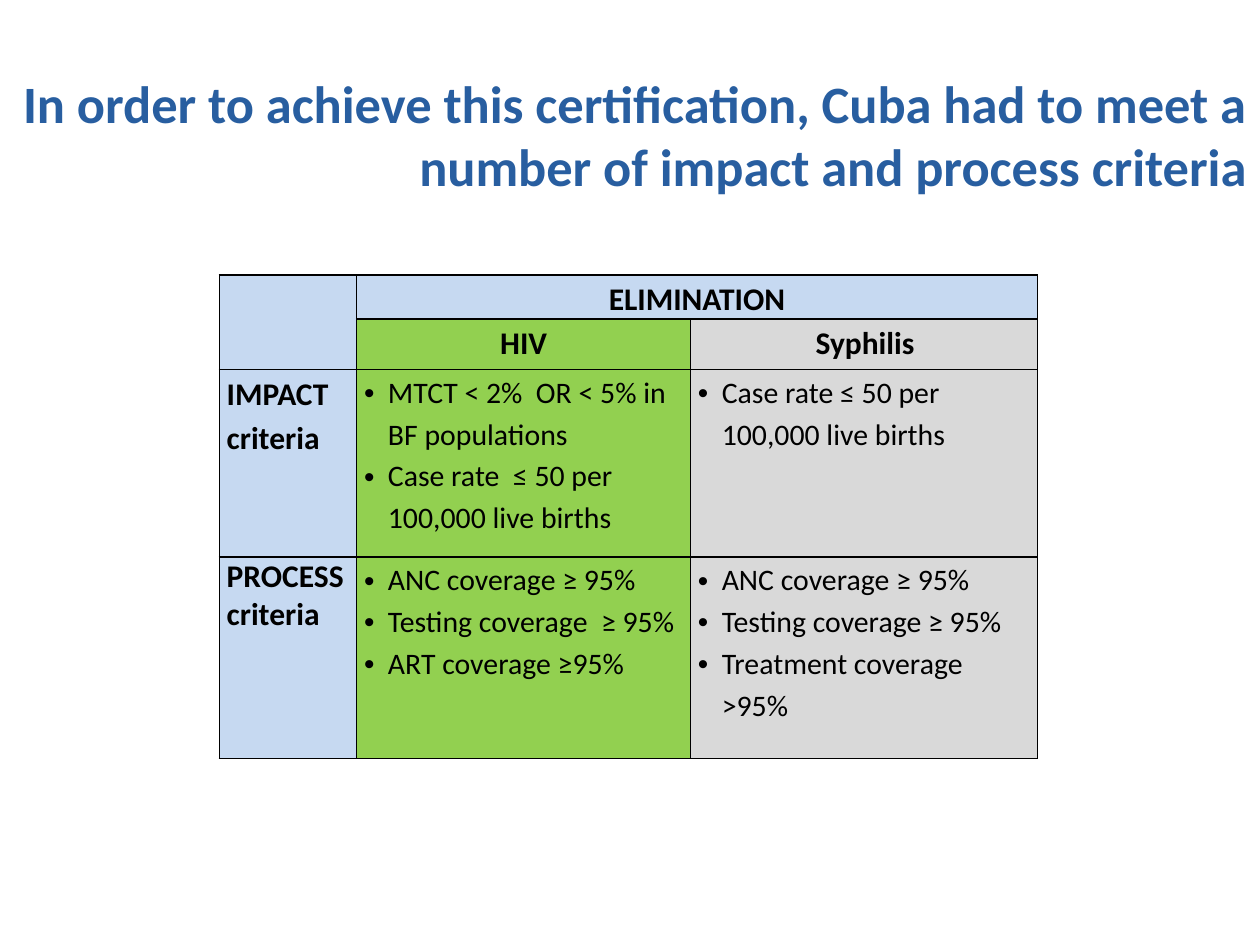
from dataclasses import dataclass
from lxml import etree
from pptx import Presentation
from pptx.dml.color import RGBColor
from pptx.enum.text import MSO_ANCHOR, PP_ALIGN
from pptx.oxml.ns import qn
from pptx.util import Cm, Pt

LEFT, CENTER, RIGHT = PP_ALIGN.LEFT, PP_ALIGN.CENTER, PP_ALIGN.RIGHT
TOP = MSO_ANCHOR.TOP
BLACK = RGBColor(0x00, 0x00, 0x00)
TITLE_BLUE = RGBColor(0x28, 0x5E, 0xA0)
PALE_BLUE = RGBColor(0xC6, 0xD9, 0xF1)
GREEN = RGBColor(0x92, 0xD0, 0x50)
GREY = RGBColor(0xD9, 0xD9, 0xD9)

TITLE = ("In order to achieve this certification, Cuba had to meet "
         "a number of impact and process criteria")
COL_WIDTHS = (2.77, 6.73, 6.99)
ROW_HEIGHTS = (0.89, 1.02, 3.78, 4.06)
TITLE_FONT = {"name": "Calibri", "size": Pt(30), "bold": True}
HEAD_FONT = {"name": "Calibri", "size": Pt(18), "bold": True}
BODY_FONT = {"name": "Calibri", "size": Pt(17), "bold": False}
CELL_FORMAT = {"margin_left": Cm(0.15), "margin_right": Cm(0.15),
               "margin_top": 0, "margin_bottom": 0, "vertical_anchor": TOP}


@dataclass(frozen=True)
class CellText:
    row: int
    col: int
    lines: tuple[str, ...]
    align: PP_ALIGN = LEFT
    bulleted: bool = False
    spacing: float = 1.15
    margin: float = 0
    indent: float = 0


def bullets(row: int, col: int, *lines: str) -> CellText:
    return CellText(row, col, lines, bulleted=True, margin=0.48, indent=-0.48)


CELL_TEXTS = (
    CellText(0, 1, ("ELIMINATION",), CENTER),
    CellText(1, 1, ("HIV",), CENTER),
    CellText(1, 2, ("Syphilis",), CENTER, margin=0.3, indent=-0.25),
    CellText(2, 0, ("IMPACT", "criteria")),
    bullets(2, 1, "MTCT < 2%  OR < 5% in BF populations",
            "Case rate  ≤ 50 per 100,000 live births"),
    bullets(2, 2, "Case rate ≤ 50 per 100,000 live births"),
    CellText(3, 0, ("PROCESS criteria",), spacing=1.0),
    bullets(3, 1, "ANC coverage ≥ 95%", "Testing coverage  ≥ 95%", "ART coverage ≥95%"),
    bullets(3, 2, "ANC coverage ≥ 95%", "Testing coverage ≥ 95%", "Treatment coverage >95%"),
)


def set_attrs(target, values: dict) -> None:
    for name, value in values.items():
        setattr(target, name, value)


def add_run(p, text: str, font: dict, color: RGBColor) -> None:
    r = p.add_run()
    r.text = text
    set_attrs(r.font, font)
    r.font.color.rgb = color


def style_cell(cell, fill: RGBColor) -> None:
    set_attrs(cell, CELL_FORMAT)
    tc_pr = cell._tc.get_or_add_tcPr()
    for side in ("lnL", "lnR", "lnT", "lnB"):
        ln = etree.SubElement(tc_pr, qn(f"a:{side}"), w=str(Pt(1)))
        solid = etree.SubElement(ln, qn("a:solidFill"))
        etree.SubElement(solid, qn("a:srgbClr"), val=str(BLACK))
    cell.fill.solid()
    cell.fill.fore_color.rgb = fill


def write_cell(cell, content: CellText) -> None:
    tf = cell.text_frame
    font = BODY_FONT if content.bulleted else HEAD_FONT
    for i, line in enumerate(content.lines):
        p = tf.add_paragraph() if i else tf.paragraphs[0]
        set_attrs(p, {"alignment": content.align, "line_spacing": content.spacing})
        p_pr = p._p.get_or_add_pPr()
        p_pr.set("marL", str(Cm(content.margin)))
        p_pr.set("indent", str(Cm(content.indent)))
        if content.bulleted:
            etree.SubElement(p_pr, qn("a:buFont"), typeface="Arial")
            etree.SubElement(p_pr, qn("a:buChar"), char="•")
        add_run(p, line, font, BLACK)


def add_criteria_table(s) -> None:
    frame = s.shapes.add_table(
        len(ROW_HEIGHTS), len(COL_WIDTHS), Cm(4.42), Cm(5.54),
        Cm(sum(COL_WIDTHS)), Cm(sum(ROW_HEIGHTS)))
    table = frame.table
    set_attrs(table, {"first_row": False, "horz_banding": False})
    for column, width in zip(table.columns, COL_WIDTHS):
        column.width = Cm(width)
    for row, height in zip(table.rows, ROW_HEIGHTS):
        row.height = Cm(height)
    for i, row in enumerate(table.rows):
        for cell, fill in zip(row.cells, (PALE_BLUE, GREEN, GREY)):
            style_cell(cell, fill if i else PALE_BLUE)
    table.cell(0, 0).merge(table.cell(1, 0))
    table.cell(0, 1).merge(table.cell(0, 2))
    for content in CELL_TEXTS:
        write_cell(table.cell(content.row, content.col), content)


def add_title(s) -> None:
    tf = s.shapes.add_textbox(Cm(0), Cm(1.3), Cm(25.4), Cm(3.43)).text_frame
    set_attrs(tf, {"word_wrap": True, "vertical_anchor": TOP})
    p = tf.paragraphs[0]
    p.alignment = RIGHT
    add_run(p, TITLE, TITLE_FONT, TITLE_BLUE)


def main() -> None:
    prs = Presentation()
    set_attrs(prs, {"slide_width": Cm(25.4), "slide_height": Cm(19.05)})
    s = prs.slides.add_slide(prs.slide_layouts[6])
    add_criteria_table(s)
    add_title(s)
    prs.save("out.pptx")


if __name__ == "__main__":
    main()
